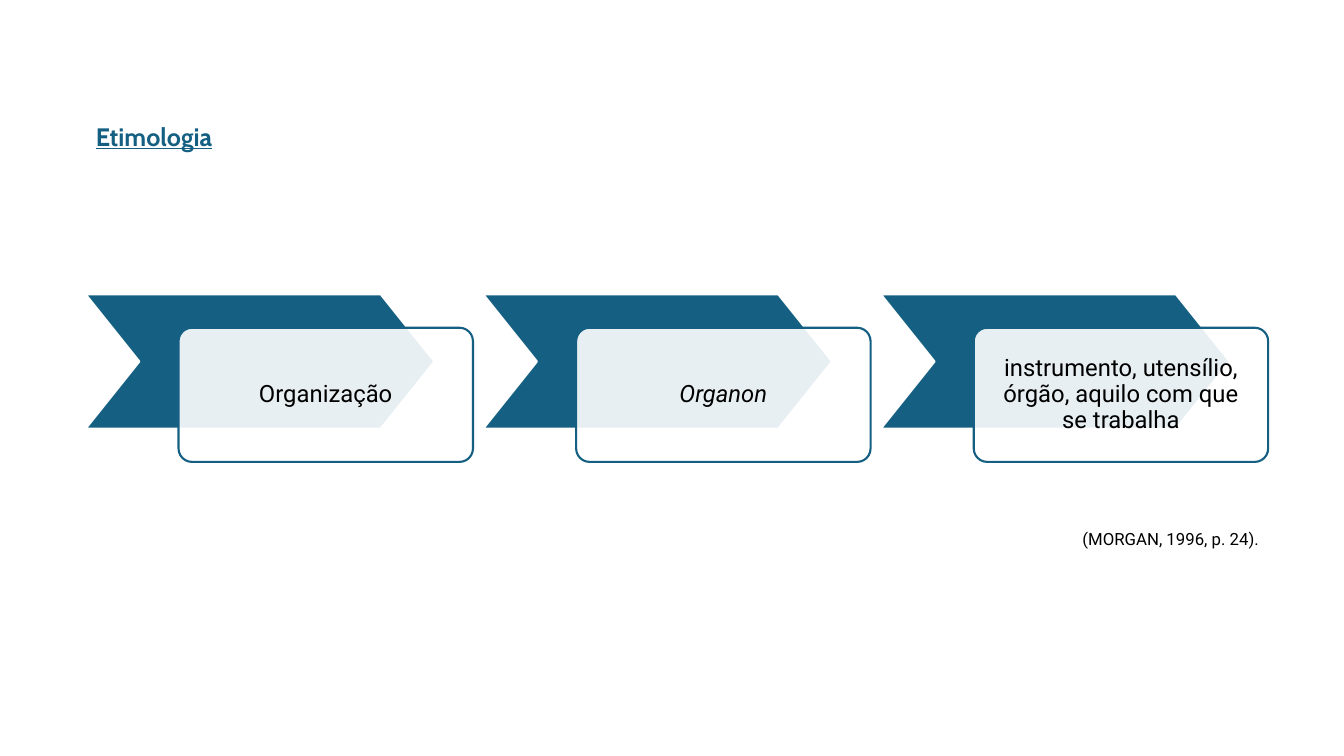
from lxml import etree
from pptx import Presentation
from pptx.dml.color import RGBColor
from pptx.enum.shapes import MSO_SHAPE
from pptx.enum.text import MSO_ANCHOR, PP_ALIGN
from pptx.oxml.ns import qn
from pptx.util import Cm, Pt

CHEVRON = MSO_SHAPE.CHEVRON
ROUNDED = MSO_SHAPE.ROUNDED_RECTANGLE
TOP, MIDDLE = MSO_ANCHOR.TOP, MSO_ANCHOR.MIDDLE
LEFT, CENTER = PP_ALIGN.LEFT, PP_ALIGN.CENTER

BLUE = RGBColor(0x15, 0x60, 0x82)
WHITE = RGBColor(0xFF, 0xFF, 0xFF)
BLACK = RGBColor(0x00, 0x00, 0x00)

STEPS = [
    ("Organização", False),
    ("Organon", True),
    ("instrumento, utensílio, órgão, aquilo com que se trabalha", False),
]
STEP_LEFT, STEP_PITCH = 2.16, 10.02
CHEVRON_TOP, CHEVRON_WIDTH = 7.42, 8.79
BOX_OFFSET, BOX_TOP, BOX_WIDTH = 2.34, 8.26, 7.42
STEP_HEIGHT = 3.38


def add_outlined_shape(kind, box, adjustment, fill, line):
    shape = slide.shapes.add_shape(kind, *map(Cm, box))
    shape.shadow.inherit = False
    shape.adjustments[0] = adjustment
    shape.fill.solid()
    shape.fill.fore_color.rgb = fill
    shape.line.color.rgb = line
    shape.line.width = Pt(1.5)
    return shape


def write(shape, text, anchor, alignment, **font_format):
    """Fill the shape with one wrapped paragraph; a color entry sets the text colour."""
    frame = shape.text_frame
    frame.word_wrap = True
    frame.vertical_anchor = anchor
    paragraph = frame.paragraphs[0]
    paragraph.alignment = alignment
    run = paragraph.add_run()
    run.text = text
    run.font.color.rgb = font_format.pop("color")
    for name, value in font_format.items():
        setattr(run.font, name, value)
    return paragraph


presentation = Presentation()
presentation.slide_width = Cm(33.87)
presentation.slide_height = Cm(19.05)
slide = presentation.slides.add_slide(presentation.slide_layouts[5])

title = slide.shapes.title
title.left, title.top, title.width, title.height = map(Cm, (2.16, 2.92, 8.05, 1.03))
write(title, "Etimologia", TOP, LEFT, name="Cabin", size=Pt(18),
      bold=True, underline=True, color=BLUE)

for index, (text, italic) in enumerate(STEPS):
    left = STEP_LEFT + index * STEP_PITCH
    add_outlined_shape(CHEVRON, (left, CHEVRON_TOP, CHEVRON_WIDTH, STEP_HEIGHT),
                       0.4, BLUE, WHITE)
    box = add_outlined_shape(
        ROUNDED, (left + BOX_OFFSET, BOX_TOP, BOX_WIDTH, STEP_HEIGHT), 0.1, WHITE, BLUE)
    color = box.fill._xPr.find(qn("a:solidFill"))[0]
    etree.SubElement(color, qn("a:alpha"), val="90000")
    for side in ("left", "top", "right", "bottom"):
        setattr(box.text_frame, f"margin_{side}", Cm(0.33))
    paragraph = write(box, text, MIDDLE, CENTER, name="Roboto", size=Pt(17),
                      italic=italic, color=BLACK)
    paragraph.line_spacing = 0.9

citation = slide.shapes.add_textbox(Cm(27.03), Cm(13.21), Cm(4.95), Cm(0.76))
write(citation, "(MORGAN, 1996, p. 24).", TOP, LEFT, name="Roboto", size=Pt(12), color=BLACK)

presentation.save("out.pptx")
